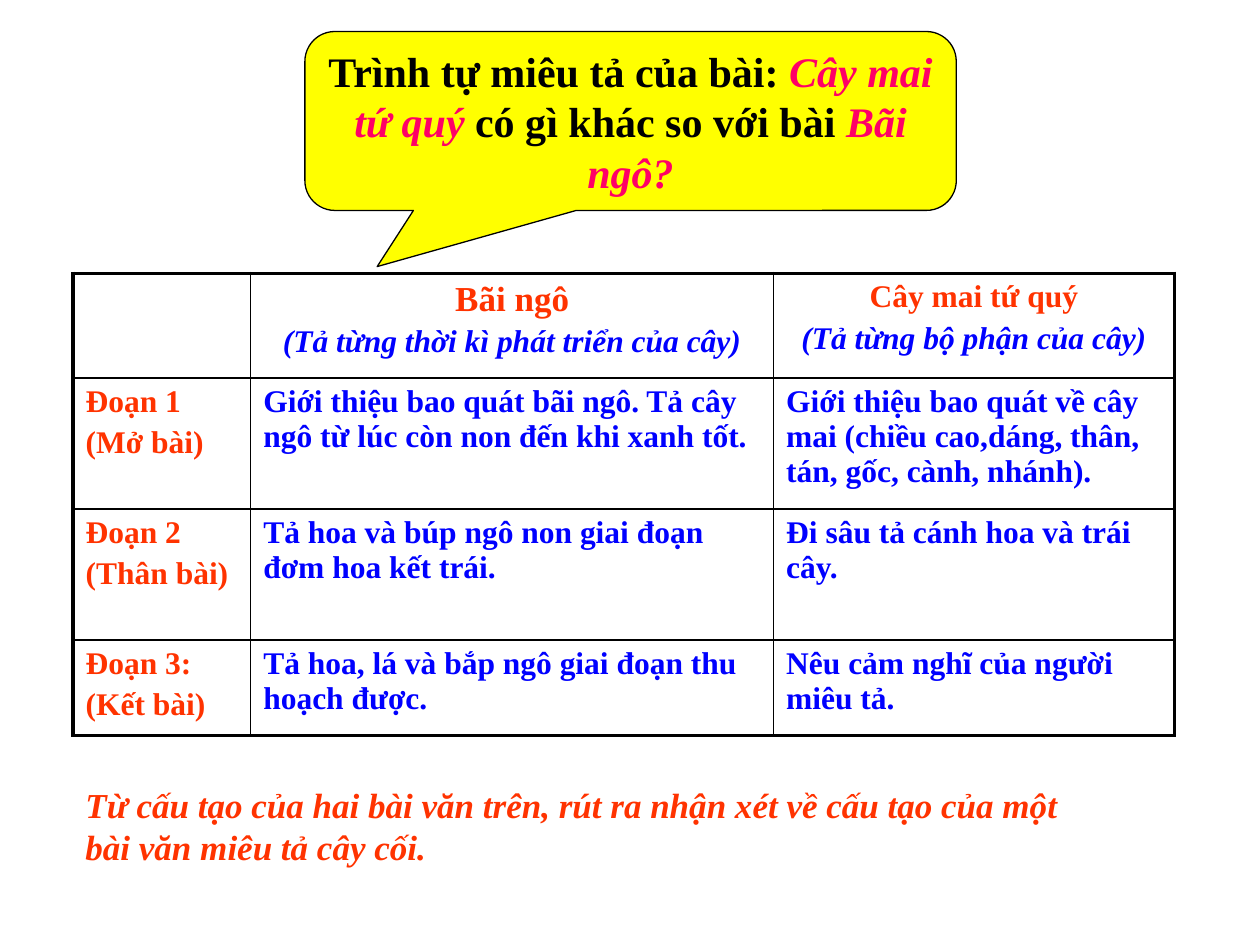
from lxml import etree
from pptx import Presentation
from pptx.dml.color import RGBColor
from pptx.enum.shapes import MSO_SHAPE
from pptx.enum.text import MSO_ANCHOR, PP_ALIGN
from pptx.oxml.ns import qn
from pptx.util import Inches, Pt

CALLOUT = MSO_SHAPE.ROUNDED_RECTANGULAR_CALLOUT
MIDDLE = MSO_ANCHOR.MIDDLE
CENTER = PP_ALIGN.CENTER
LEFT = PP_ALIGN.LEFT

FONT = "Times New Roman"
BLACK, YELLOW, PINK = "000000", "FFFF00", "FF0066"
ORANGE, BLUE = "FF3300", "0000FF"
OUTER_BORDER, INNER_BORDER = 2.25, 1

QUESTION = [
    ("Trình tự miêu tả của bài: ", False),
    ("Cây mai tứ quý", True),
    (" có gì khác so với bài ", False),
    ("Bãi ngô?", True),
]
ESSAYS = [
    ("Bãi ngô", "(Tả từng thời kì phát triển của cây)", 20),
    ("Cây mai tứ quý", "(Tả từng bộ phận của cây)", 18),
]
SECTIONS = [
    ("Đoạn 1", "(Mở bài)",
     "Giới thiệu bao quát bãi ngô. Tả cây ngô từ lúc còn non đến khi xanh tốt.",
     "Giới thiệu bao quát về cây mai (chiều cao,dáng, thân, tán, gốc, cành, nhánh)."),
    ("Đoạn 2", "(Thân bài)",
     "Tả hoa và búp ngô non giai đoạn đơm hoa kết trái.",
     "Đi sâu tả cánh hoa và trái cây."),
    ("Đoạn 3:", "(Kết bài)",
     "Tả hoa, lá và bắp ngô giai đoạn thu hoạch được.",
     "Nêu cảm nghĩ của người miêu tả."),
]
CONCLUSION = ("Từ cấu tạo của hai bài văn trên, rút ra nhận xét về cấu tạo "
              "của một bài văn miêu tả cây cối.")
COLUMN_WIDTHS = [1.41, 4.15, 3.18]
ROW_HEIGHTS = [0.83, 1.04, 1.04, 0.76]


def rgb(color):
    return RGBColor.from_string(color)


def style_font(font, size, color, italic=False):
    font.name = FONT
    font.size = Pt(size)
    font.bold = True
    font.italic = italic
    font.color.rgb = rgb(color)


def add_question(slide):
    callout = slide.shapes.add_shape(
        CALLOUT, Inches(2.42), Inches(0.25), Inches(5.17), Inches(1.42))
    for index, value in enumerate([-0.389, 0.814, 0.167]):
        callout.adjustments[index] = value
    callout.shadow.inherit = False
    callout.fill.solid()
    callout.fill.fore_color.rgb = rgb(YELLOW)
    callout.line.color.rgb = rgb(BLACK)
    callout.line.width = Pt(0.75)
    callout.text_frame.word_wrap = True
    callout.text_frame.vertical_anchor = MIDDLE
    question = callout.text_frame.paragraphs[0]
    question.alignment = CENTER
    for words, is_title in QUESTION:
        run = question.add_run()
        run.text = words
        style_font(run.font, 24, PINK if is_title else BLACK, is_title)


def fill_cell(cell, lines, alignment=LEFT):
    frame = cell.text_frame
    for index, (words, size, color, italic) in enumerate(lines):
        paragraph = frame.add_paragraph() if index else frame.paragraphs[0]
        paragraph.text = words
        paragraph.alignment = alignment
        paragraph.space_before = Pt(0.2 * size if index else 0)
        style_font(paragraph.font, size, color, italic)


def set_borders(cell, outer_sides):
    properties = cell._tc.get_or_add_tcPr()
    for side in "LRTB":
        width = OUTER_BORDER if side in outer_sides else INNER_BORDER
        line = etree.SubElement(properties, qn(f"a:ln{side}"), w=str(Pt(width)))
        fill = etree.SubElement(line, qn("a:solidFill"))
        etree.SubElement(fill, qn("a:srgbClr"), val=BLACK)
    cell.fill.background()


def add_comparison(slide):
    row_count, column_count = len(ROW_HEIGHTS), len(COLUMN_WIDTHS)
    table = slide.shapes.add_table(
        row_count, column_count, Inches(0.58), Inches(2.17),
        Inches(sum(COLUMN_WIDTHS)), Inches(sum(ROW_HEIGHTS))).table
    table.first_row = False
    table.horz_banding = False
    for column, width in zip(table.columns, COLUMN_WIDTHS):
        column.width = Inches(width)
    for row, height in zip(table.rows, ROW_HEIGHTS):
        row.height = Inches(height)

    for column, (essay, order, size) in enumerate(ESSAYS, 1):
        heading = [(essay, size, ORANGE, False), (order, 18, BLUE, True)]
        fill_cell(table.cell(0, column), heading, CENTER)
    for row, (section, role, *contents) in enumerate(SECTIONS, 1):
        label = [(words, 18, ORANGE, False) for words in (section, role)]
        fill_cell(table.cell(row, 0), label)
        for column, content in enumerate(contents, 1):
            fill_cell(table.cell(row, column), [(content, 18, BLUE, False)])

    for row in range(row_count):
        for column in range(column_count):
            edges = {"L": column == 0, "R": column == column_count - 1,
                     "T": row == 0, "B": row == row_count - 1}
            outer_sides = [side for side, is_outer in edges.items() if is_outer]
            set_borders(table.cell(row, column), outer_sides)


def add_conclusion(slide):
    frame = slide.shapes.add_textbox(
        Inches(0.58), Inches(6.17), Inches(8.17), Inches(0.77)).text_frame
    frame.word_wrap = True
    conclusion = frame.paragraphs[0]
    conclusion.text = CONCLUSION
    style_font(conclusion.font, 20, ORANGE, True)


def main():
    presentation = Presentation()
    presentation.slide_width = Inches(10)
    presentation.slide_height = Inches(7.5)
    slide = presentation.slides.add_slide(presentation.slide_layouts[6])
    add_question(slide)
    add_comparison(slide)
    add_conclusion(slide)
    presentation.save("out.pptx")


if __name__ == "__main__":
    main()
